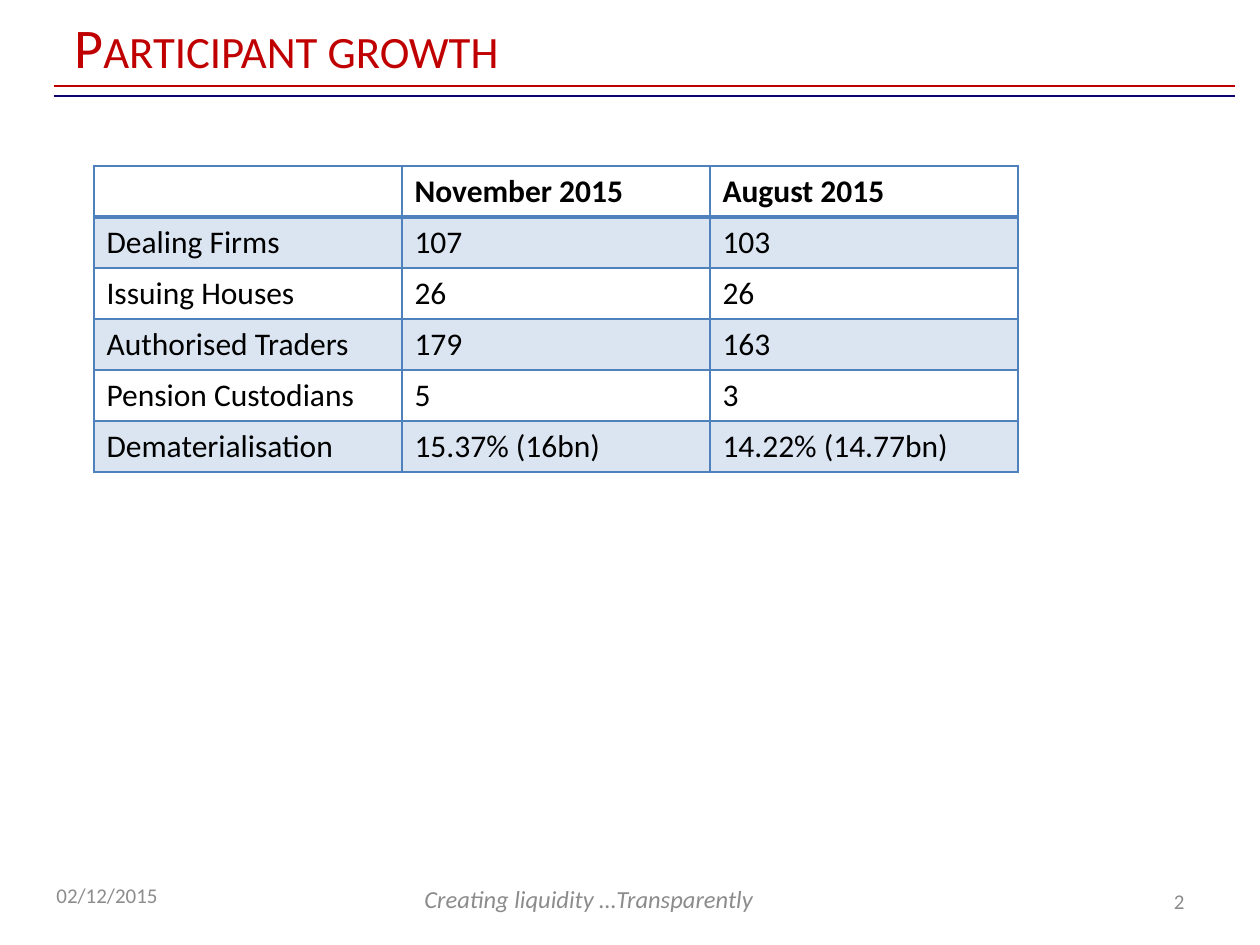
import pptx
import pptx.dml.color
import pptx.enum.shapes
import pptx.enum.text
import pptx.oxml.ns
import pptx.util
from dataclasses import dataclass
from lxml import etree

PX = 914400 // 126


@dataclass(frozen=True)
class Theme:
    font: str = "Calibri"
    red: str = "C00000"
    navy: str = "0A0571"
    blue: str = "4F81BD"
    grey: str = "8C8C8C"
    black: str = "000000"
    title: int = 32
    body: int = 18
    slogan: int = 14
    small: int = 12


theme = Theme()
qn = pptx.oxml.ns.qn
ANCHOR = pptx.enum.text.MSO_ANCHOR
ALIGN = pptx.enum.text.PP_ALIGN


def write(frame, text, size, color, bold=False, italic=False, caps=None,
          align=ALIGN.LEFT, anchor=ANCHOR.TOP):
    frame.word_wrap = True
    frame.vertical_anchor = anchor
    para = frame.paragraphs[0]
    para.alignment = align
    span = para.add_run()
    span.text = text
    font = span.font
    font.name, font.size = theme.font, pptx.util.Pt(size)
    font.bold, font.italic = bold, italic
    font.color.rgb = pptx.dml.color.RGBColor.from_string(color)
    if caps:
        span._r.get_or_add_rPr().set("cap", caps)


def add_border(cell, side, points):
    props = cell._tc.get_or_add_tcPr()
    line = etree.SubElement(props, qn(f"a:ln{side}"), w=str(pptx.util.Pt(points)))
    fill = etree.SubElement(line, qn("a:solidFill"))
    etree.SubElement(fill, qn("a:srgbClr"), val=theme.blue)


deck = pptx.Presentation()
deck.slide_width, deck.slide_height = 1260 * PX, 945 * PX
page = deck.slides.add_slide(deck.slide_layouts[6])

# Double rule under the title
for y, color in ((96, theme.navy), (86, theme.red)):
    rule = page.shapes.add_connector(
        pptx.enum.shapes.MSO_CONNECTOR.STRAIGHT, 54 * PX, y * PX, 1235 * PX, y * PX)
    rule.line.color.rgb = pptx.dml.color.RGBColor.from_string(color)
    rule.line.width = pptx.util.Pt(0.75)
    etree.SubElement(rule._element.spPr, qn("a:effectLst"))

# Title and footer
small = dict(size=theme.small, color=theme.grey, anchor=ANCHOR.MIDDLE)
texts = [
    ("Creating liquidity …Transparently", (412, 878, 400, 50),
     dict(size=theme.slogan, color=theme.grey, italic=True)),
    ("02/12/2015", (44, 870, 294, 50), small),
    ("2", (903, 876, 294, 50), dict(small, align=ALIGN.RIGHT)),
    ("Participant growth", (62, 8, 1003, 77),
     dict(size=theme.title, color=theme.red, caps="small", anchor=ANCHOR.MIDDLE)),
]
for text, place, style in texts:
    box = page.shapes.add_textbox(*(length * PX for length in place))
    write(box.text_frame, text, **style)

# Participant table
rows = [
    ("", "November 2015", "August 2015"),
    ("Dealing Firms", "107", "103"),
    ("Issuing Houses", "26", "26"),
    ("Authorised Traders", "179", "163"),
    ("Pension Custodians", "5", "3"),
    ("Dematerialisation", "15.37% (16bn)", "14.22% (14.77bn)"),
]
table = page.shapes.add_table(
    len(rows), len(rows[0]), 94 * PX, 166 * PX, 924 * PX, 306 * PX).table
for r, row in enumerate(rows):
    for c, text in enumerate(row):
        cell = table.cell(r, c)
        for side in "LRTB":
            under_header = (r, side) in ((0, "B"), (1, "T"))
            add_border(cell, side, 2 if under_header else 1)
        if r % 2:
            cell.fill.solid()
            cell.fill.fore_color.rgb = pptx.dml.color.RGBColor.from_string(theme.blue)
            tint = cell._tc.tcPr.find(qn("a:solidFill")).find(qn("a:srgbClr"))
            etree.SubElement(tint, qn("a:alpha"), val="20000")
        else:
            cell.fill.background()
        if text:
            write(cell.text_frame, text, theme.body, theme.black, bold=r == 0)

deck.save("out.pptx")
